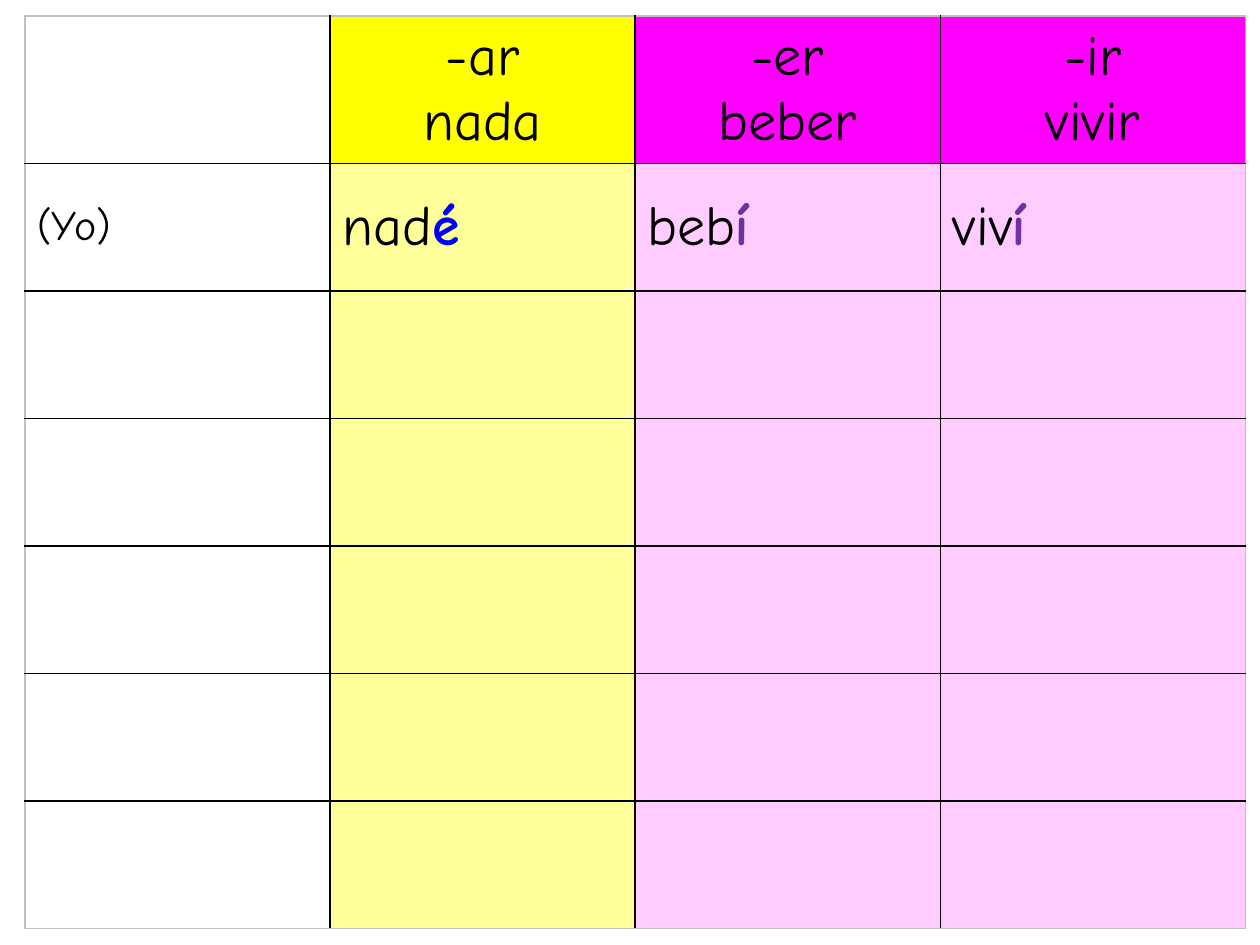
import pptx
import pptx.dml.color
import pptx.enum.text
import pptx.oxml.ns
import pptx.util
import lxml.etree
from dataclasses import dataclass

Pt = pptx.util.Pt
rgb = pptx.dml.color.RGBColor.from_string
qn = pptx.oxml.ns.qn
Align = pptx.enum.text.PP_ALIGN


@dataclass(frozen=True)
class Theme:
    font: str = "Comic Neue"
    ink: str = "000000"
    edge: str = "BFBFBF"
    blue: str = "0000FF"
    plum: str = "7030A0"
    heads: tuple = (None, "FFFF00", "FF00FF", "FF00FF")
    tints: tuple = (None, "FFFF99", "FFCCFF", "FFCCFF")
    big: int = 32
    small: int = 24


theme = Theme()


def border(cell, side, color):
    """Draw one side of a cell; call before the fill is set."""
    line = lxml.etree.SubElement(
        cell._tc.get_or_add_tcPr(), qn(f"a:ln{side}"), w=str(Pt(1))
    )
    fill = lxml.etree.SubElement(line, qn("a:solidFill"))
    lxml.etree.SubElement(fill, qn("a:srgbClr"), val=color)


def write(para, text, size=theme.big, color=theme.ink, bold=False):
    run = para.add_run()
    run.text = text
    font = run.font
    font.name, font.size, font.bold = theme.font, Pt(size), bold
    font.color.rgb = rgb(color)


deck = pptx.Presentation()
deck.slide_width, deck.slide_height = Pt(720), Pt(540)
slide = deck.slides.add_slide(deck.slide_layouts[6])

rows, cols = 7, 4
wide, head, tall = 174.4, 84.1, 72.9
frame = slide.shapes.add_table(
    rows, cols, Pt(14.2), Pt(9.2), Pt(wide * cols), Pt(head + tall * (rows - 1))
)
table = frame.table
table.first_row = table.horz_banding = False

for col in table.columns:
    col.width = Pt(wide)
for r, row in enumerate(table.rows):
    row.height = Pt(tall if r else head)
    for c, cell in enumerate(row.cells):
        outer = {"L": c == 0, "R": c == cols - 1, "T": r == 0, "B": r == rows - 1}
        for side, out in outer.items():
            border(cell, side, theme.edge if out else theme.ink)
        tint = (theme.tints if r else theme.heads)[c]
        if tint:
            cell.fill.solid()
            cell.fill.fore_color.rgb = rgb(tint)
        else:
            cell.fill.background()
        cell.vertical_anchor = pptx.enum.text.MSO_ANCHOR.MIDDLE

write(table.cell(1, 0).text_frame.paragraphs[0], "(Yo)", theme.small)

verbs = [
    ("-ar", "nada", "nad", "é", theme.blue),
    ("-er", "beber", "beb", "í", theme.plum),
    ("-ir", "vivir", "viv", "í", theme.plum),
]
for c, (group, verb, stem, end, color) in enumerate(verbs, 1):
    text = table.cell(0, c).text_frame
    for para, word in ((text.paragraphs[0], group), (text.add_paragraph(), verb)):
        para.alignment = Align.CENTER
        write(para, word)
    para = table.cell(1, c).text_frame.paragraphs[0]
    write(para, stem)
    write(para, end, color=color, bold=True)

deck.save("out.pptx")
